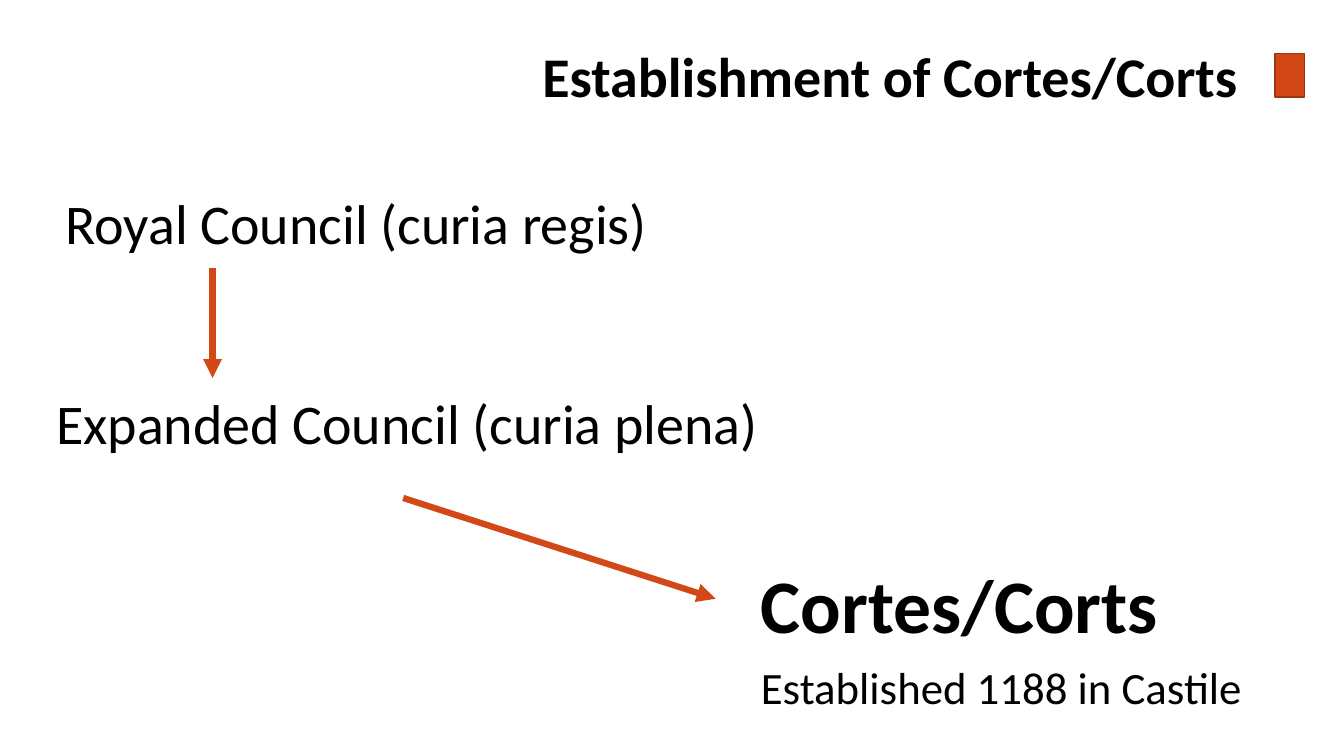
"""Build a slide on how the Cortes/Corts grew out of the royal council."""
from lxml import etree
from pptx import Presentation
from pptx.dml.color import RGBColor
from pptx.enum import shapes, text
from pptx.oxml import ns
from pptx.util import Pt

COLORS = {"text": "000000", "accent": "D34817", "outline": "9C3511"}

presentation = Presentation()
presentation.slide_width, presentation.slide_height = Pt(960), Pt(540)
slide = presentation.slides.add_slide(presentation.slide_layouts[5])


def write_text(shape, box, content, size, bold=False):
    """Place a shape and fill it with one left-aligned line of text."""
    shape.left, shape.top, shape.width, shape.height = map(Pt, box)
    frame = shape.text_frame
    frame.text = content
    frame_format = {
        "word_wrap": True,
        "auto_size": text.MSO_AUTO_SIZE.NONE,
        "vertical_anchor": text.MSO_ANCHOR.TOP,
    }
    for name, value in frame_format.items():
        setattr(frame, name, value)
    paragraph = frame.paragraphs[0]
    paragraph.alignment = text.PP_ALIGN.LEFT
    font = paragraph.runs[0].font
    for name, value in {"name": "Calibri", "size": Pt(size), "bold": bold}.items():
        setattr(font, name, value)
    font.color.rgb = RGBColor.from_string(COLORS["text"])


write_text(slide.shapes.title, (380.2, 26, 530.6, 55.7),
           "Establishment of Cortes/Corts", 40, True)

stages = [
    ((39.6, 131, 454.3, 55.7), "Royal Council (curia regis)", 40, False),
    ((33.1, 274.3, 541.4, 55.7), "Expanded Council (curia plena)", 40, False),
    ((536.4, 395.3, 305.3, 72.7), "Cortes/Corts", 54, True),
    ((536.4, 468, 364.3, 46), "Established 1188 in Castile", 32, False),
]
for box, content, size, bold in stages:
    write_text(slide.shapes.add_textbox(0, 0, 0, 0), box, content, size, bold)

for ends in [(151.8, 191.5, 151.8, 270), (288, 355.7, 511.2, 427.7)]:
    arrow = slide.shapes.add_connector(shapes.MSO_CONNECTOR.STRAIGHT, *map(Pt, ends))
    arrow.line.width = Pt(4.5)
    arrow.line.color.rgb = RGBColor.from_string(COLORS["accent"])
    etree.SubElement(arrow.line._get_or_add_ln(), ns.qn("a:tailEnd"), type="triangle")
    etree.SubElement(arrow._element.spPr, ns.qn("a:effectLst"))

marker = slide.shapes.add_shape(shapes.MSO_SHAPE.RECTANGLE,
                                *map(Pt, (910.8, 38.2, 20.9, 31)))
marker.shadow.inherit = False
marker.fill.solid()
marker.fill.fore_color.rgb = RGBColor.from_string(COLORS["accent"])
marker.line.color.rgb = RGBColor.from_string(COLORS["outline"])
marker.line.width = Pt(1)

presentation.save("out.pptx")
